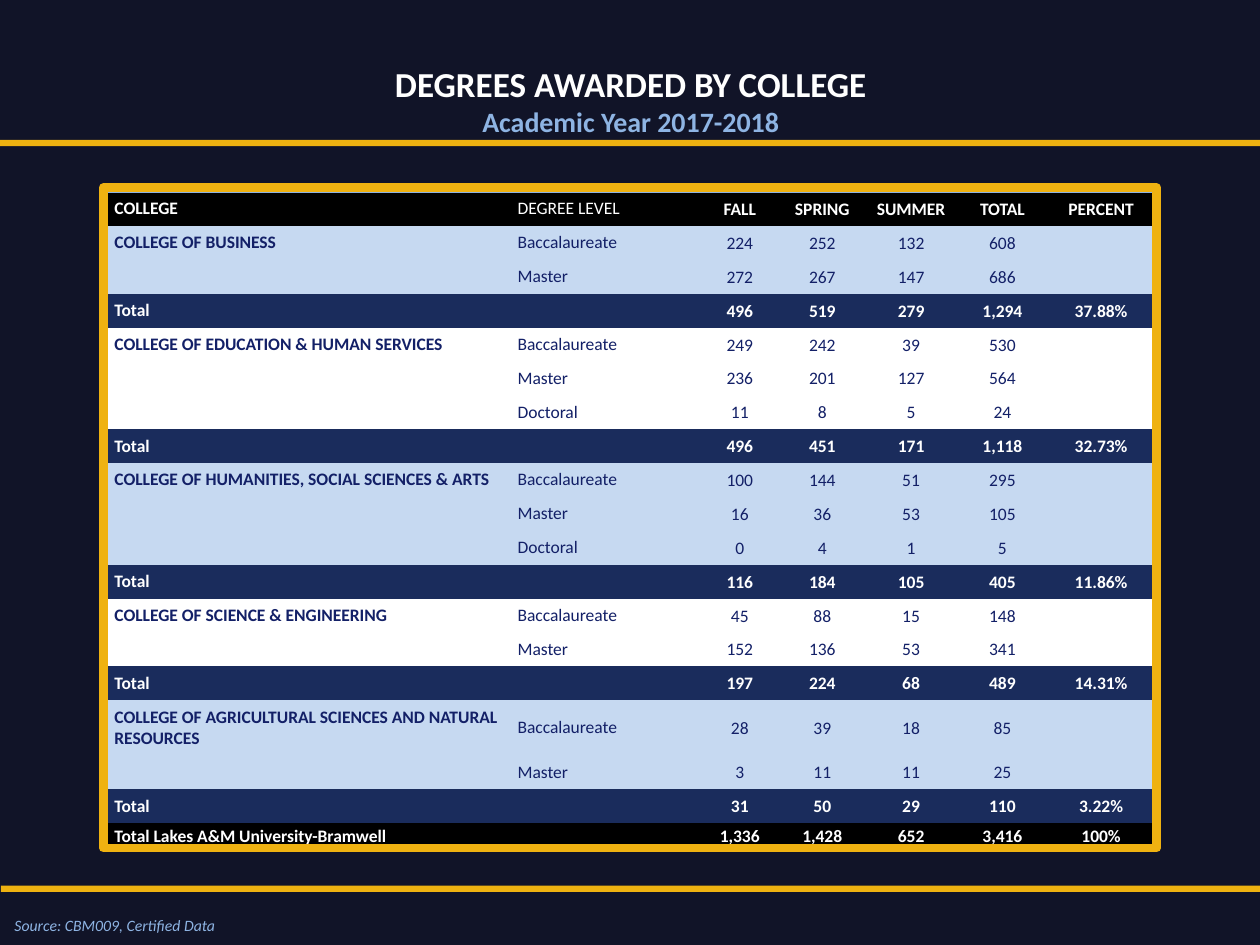
from lxml.etree import SubElement
from pptx import Presentation
from pptx.dml.color import RGBColor
from pptx.enum.shapes import MSO_SHAPE
from pptx.enum.text import MSO_ANCHOR, PP_ALIGN
from pptx.oxml.ns import qn
from pptx.util import Pt

NIGHT = RGBColor(0x11, 0x14, 0x28)
GOLD = RGBColor(0xEE, 0xB2, 0x11)
AMBER = RGBColor(0xEF, 0xB2, 0x11)
SKY = RGBColor(0x8E, 0xB4, 0xE3)
PALE = RGBColor(0xC6, 0xD9, 0xF1)
NAVY = RGBColor(0x1A, 0x2C, 0x5C)
INK = RGBColor(0x13, 0x20, 0x67)
WHITE = RGBColor(0xFF, 0xFF, 0xFF)
BLACK = RGBColor(0, 0, 0)
NO_GRID = "{2D5ABB26-0587-4C30-8999-92F81FD0307C}"


def style(para, size, color, bold=False, align=PP_ALIGN.LEFT):
    para.alignment = align
    font = para.font
    font.name, font.size, font.bold = "Calibri", Pt(size), bold
    font.color.rgb = color


def box(left, top, width, height):
    rect = slide.shapes.add_shape(
        MSO_SHAPE.RECTANGLE, Pt(left), Pt(top), Pt(width), Pt(height))
    rect.shadow.inherit = False
    return rect


colleges = [
    ("COLLEGE OF BUSINESS",
     [("Baccalaureate", "224", "252", "132", "608"),
      ("Master", "272", "267", "147", "686")],
     ("496", "519", "279", "1,294", "37.88%")),
    ("COLLEGE OF EDUCATION & HUMAN SERVICES",
     [("Baccalaureate", "249", "242", "39", "530"),
      ("Master", "236", "201", "127", "564"),
      ("Doctoral", "11", "8", "5", "24")],
     ("496", "451", "171", "1,118", "32.73%")),
    ("COLLEGE OF HUMANITIES, SOCIAL SCIENCES & ARTS",
     [("Baccalaureate", "100", "144", "51", "295"),
      ("Master", "16", "36", "53", "105"),
      ("Doctoral", "0", "4", "1", "5")],
     ("116", "184", "105", "405", "11.86%")),
    ("COLLEGE OF SCIENCE & ENGINEERING",
     [("Baccalaureate", "45", "88", "15", "148"),
      ("Master", "152", "136", "53", "341")],
     ("197", "224", "68", "489", "14.31%")),
    ("COLLEGE OF AGRICULTURAL SCIENCES AND NATURAL RESOURCES",
     [("Baccalaureate", "28", "39", "18", "85"),
      ("Master", "3", "11", "11", "25")],
     ("31", "50", "29", "110", "3.22%")),
]

rows = [(("COLLEGE", "DEGREE LEVEL", "FALL", "SPRING", "SUMMER", "TOTAL", "PERCENT"),
         BLACK, WHITE)]
for i, (college, levels, total) in enumerate(colleges):
    for j, level in enumerate(levels):
        name = college if j == 0 else ""
        rows.append(((name, *level, ""), WHITE if i % 2 else PALE, INK))
    rows.append((("Total", "", *total), NAVY, WHITE))
rows.append((("Total Lakes A&M University-Bramwell", "",
              "1,336", "1,428", "652", "3,416", "100%"), BLACK, WHITE))

deck = Presentation()
deck.slide_width, deck.slide_height = Pt(720), Pt(540)
slide = deck.slides.add_slide(deck.slide_layouts[5])
slide.background.fill.solid()
slide.background.fill.fore_color.rgb = NIGHT

title = slide.shapes.title
title.left, title.top, title.width, title.height = Pt(124.5), Pt(32), Pt(472), Pt(72.5)
frame = title.text_frame
frame.vertical_anchor = MSO_ANCHOR.TOP
frame.text = "DEGREES AWARDED BY COLLEGE\nAcademic Year 2017-2018"
style(frame.paragraphs[0], 20, WHITE, True, PP_ALIGN.CENTER)
style(frame.paragraphs[1], 16, SKY, True, PP_ALIGN.CENTER)

grid = slide.shapes.add_table(len(rows), 7, Pt(61.8), Pt(109.7), Pt(596.5), Pt(373.5))
table = grid.table
table.first_row = table.horz_banding = False
table._tbl.tblPr.find(qn("a:tableStyleId")).text = NO_GRID
for column, width in zip(table.columns, (230.4, 109.3, 42.5, 51.8, 49.7, 54.7, 58.1)):
    column.width = Pt(width)

for r, (texts, fill, color) in enumerate(rows):
    table.rows[r].height = Pt(19.25)
    last = r == len(rows) - 1
    for c, text in enumerate(texts):
        cell = table.cell(r, c)
        cell.fill.solid()
        cell.fill.fore_color.rgb = fill
        cell.vertical_anchor = MSO_ANCHOR.MIDDLE
        label = c < 2
        cell.margin_left = cell.margin_right = Pt(3.6 if label else 0.7)
        cell.margin_top = Pt(3.6 if label and not last else 0.7)
        cell.margin_bottom = Pt(3.6 if label and not last else 0)
        cell.text = text
        para = cell.text_frame.paragraphs[0]
        bold = c == 0 or (color == WHITE and (r, c) != (0, 1))
        style(para, 10, color, bold, PP_ALIGN.LEFT if label else PP_ALIGN.CENTER)
        if not text:
            para._p.get_or_add_endParaRPr().set("sz", "1000")
        if r == 0:
            edge = cell._tc.tcPr.makeelement(qn("a:lnT"), {"w": str(Pt(0.75))})
            SubElement(SubElement(edge, qn("a:solidFill")), qn("a:srgbClr"), val=str(SKY))
            cell._tc.tcPr.insert(0, edge)
table.rows[len(rows) - 4].height = Pt(31.6)
table.rows[len(rows) - 3].height = Pt(19.25)
table.rows[len(rows) - 1].height = Pt(15)

border = box(59, 107.3, 602, 377.3)
border.fill.background()
border.line.color.rgb = AMBER
border.line.width = Pt(5)

source = slide.shapes.add_textbox(Pt(1.2), Pt(520), Pt(136), Pt(18))
source.text_frame.word_wrap = True
source.text_frame.text = "Source: CBM009, Certified Data"
note = source.text_frame.paragraphs[0]
style(note, 9, SKY)
note.font.italic = True

for left, top in ((0.5, 506), (0, 80)):
    bar = box(left, top, 720, 3.6)
    bar.fill.solid()
    bar.fill.fore_color.rgb = GOLD
    bar.line.fill.background()

deck.save("out.pptx")
